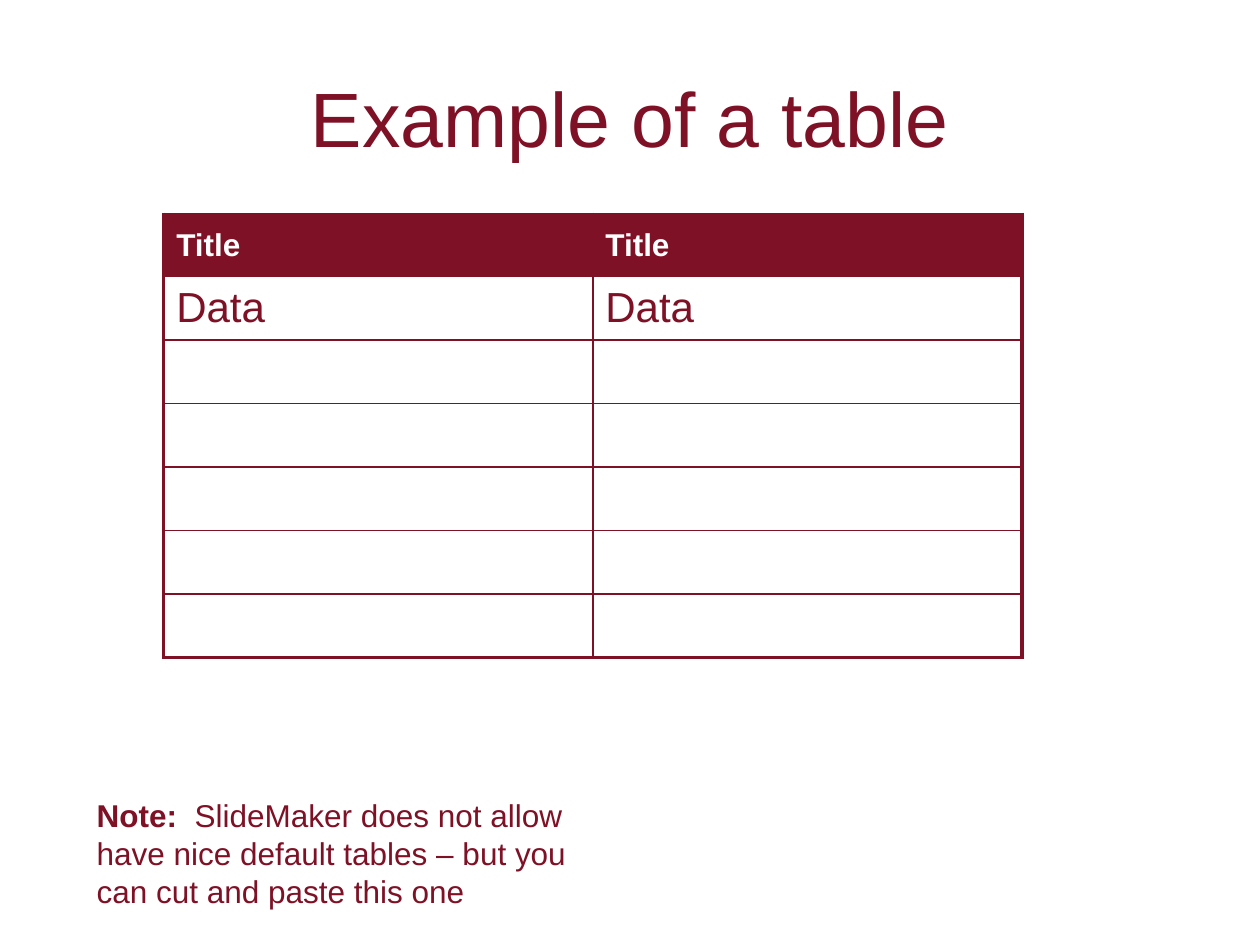
from lxml.etree import SubElement
from pptx import Presentation
from pptx.dml.color import RGBColor
from pptx.enum.text import MSO_ANCHOR, PP_ALIGN
from pptx.oxml.ns import qn
from pptx.util import Cm, Pt

# Content
TITLE = "Example of a table"
HEADER = ["Title", "Title"]
BODY = [["Data", "Data"]] + [["", ""]] * 5
NOTE = [
    ("Note:  ", True),
    ("SlideMaker does not allow have nice default tables – but you can cut and paste this one", False),
]

THEME = {
    "font": "Arial",
    "main": "7E1126",
    "light": "FFFFFF",
    "title": 44,
    "data": 24,
    "text": 18,
    "outer": 2.25,
    "inner": 1,
}


def add_run(p, text, size, color="main", bold=False):
    r = p.add_run()
    r.text = text
    r.font.name = THEME["font"]
    r.font.size = Pt(THEME[size])
    r.font.bold = bold
    r.font.color.rgb = RGBColor.from_string(THEME[color])


def add_text(s, box, runs, size, anchor=MSO_ANCHOR.TOP, align=PP_ALIGN.LEFT):
    tf = s.shapes.add_textbox(*[Cm(v) for v in box]).text_frame
    tf.word_wrap = True
    tf.vertical_anchor = anchor
    p = tf.paragraphs[0]
    p.alignment = align
    for text, bold in runs:
        add_run(p, text, size, bold=bold)


def set_borders(cell, on_edge):
    tc_pr = cell._tc.get_or_add_tcPr()
    for side in "LRTB":
        width = THEME["outer" if on_edge[side] else "inner"]
        ln = SubElement(tc_pr, qn(f"a:ln{side}"), w=str(Pt(width)))
        fill = SubElement(ln, qn("a:solidFill"))
        SubElement(fill, qn("a:srgbClr"), val=THEME["main"])


def add_grid(s, left, top, col_w, header_h, row_h):
    data = [HEADER] + BODY
    n_rows, n_cols = len(data), len(HEADER)
    height = header_h + row_h * len(BODY)
    table = s.shapes.add_table(
        n_rows, n_cols, Cm(left), Cm(top), Cm(col_w * n_cols), Cm(height)
    ).table
    table.horz_banding = False
    for col in table.columns:
        col.width = Cm(col_w)
    for i, values in enumerate(data):
        table.rows[i].height = Cm(row_h if i else header_h)
        for j, text in enumerate(values):
            cell = table.cell(i, j)
            cell.vertical_anchor = MSO_ANCHOR.MIDDLE
            set_borders(cell, {"L": j == 0, "R": j == n_cols - 1,
                               "T": i == 0, "B": i == n_rows - 1})
            p = cell.text_frame.paragraphs[0]
            if i == 0:
                cell.fill.solid()
                cell.fill.fore_color.rgb = RGBColor.from_string(THEME["main"])
                add_run(p, text, "text", "light", bold=True)
            else:
                cell.fill.background()
                if text:
                    add_run(p, text, "data")


prs = Presentation()
prs.slide_width, prs.slide_height = Cm(25.4), Cm(19.05)
s = prs.slides.add_slide(prs.slide_layouts[6])

# Title
add_text(s, (1.27, 0.76, 22.86, 3.18), [(TITLE, False)], "title",
         MSO_ANCHOR.MIDDLE, PP_ALIGN.CENTER)

# Table
add_grid(s, left=3.3, top=4.32, col_w=8.65, header_h=1.25, row_h=1.28)

# Note
add_text(s, (1.7, 15.93, 10.69, 2.54), NOTE, "text")

prs.save("out.pptx")
